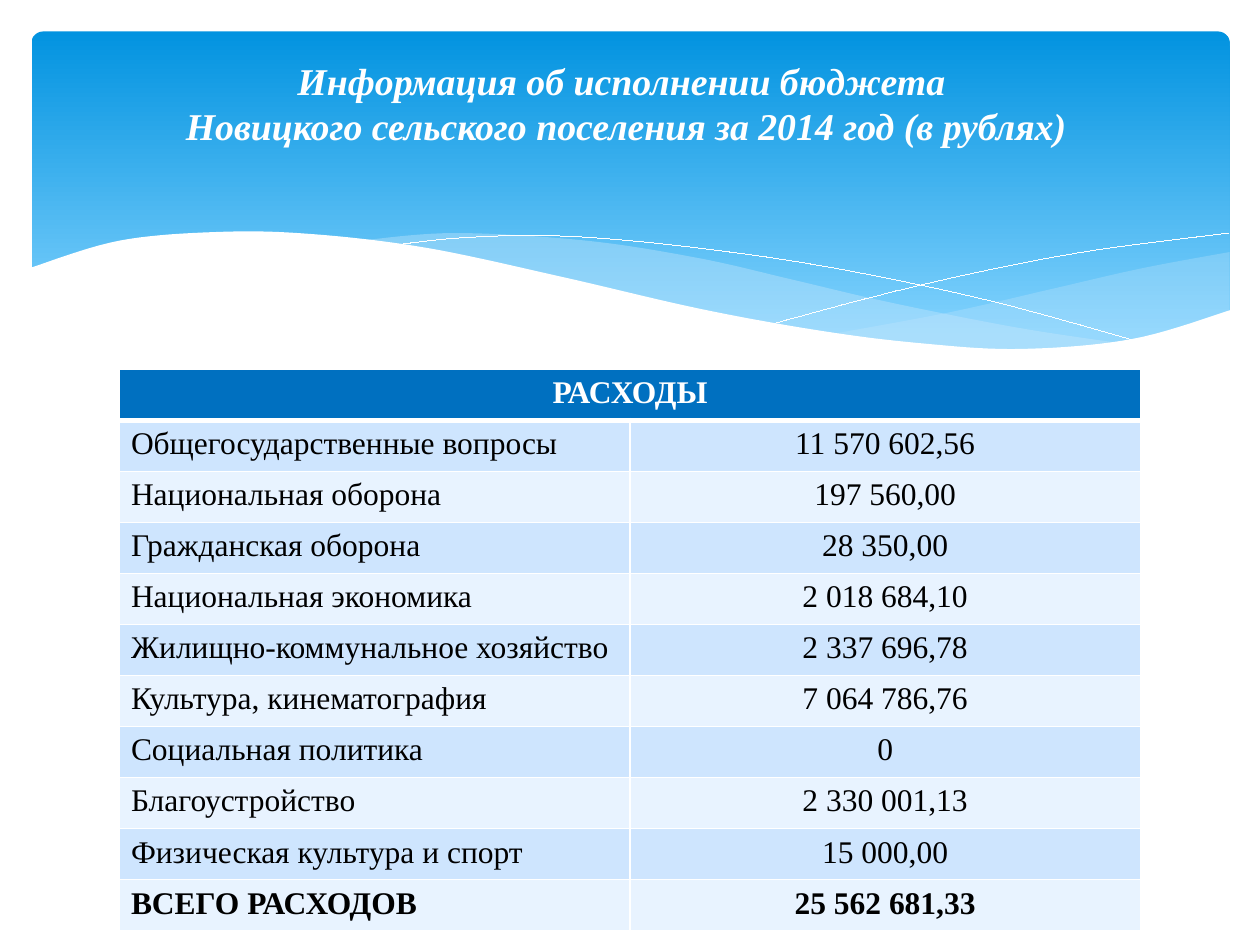
from lxml.etree import SubElement
from pptx import Presentation
from pptx.dml.color import RGBColor
from pptx.enum.shapes import MSO_SHAPE as Shape
from pptx.enum.text import MSO_ANCHOR as Anchor, PP_ALIGN as Align
from pptx.oxml.ns import qn
from pptx.util import Inches, Pt

WHITE = RGBColor(0xFF, 0xFF, 0xFF)
BLACK = RGBColor(0x00, 0x00, 0x00)
SKY_TOP = RGBColor(0x02, 0x93, 0xE0)
SKY_BOTTOM = RGBColor(0x83, 0xD3, 0xFE)
MIST = RGBColor(0xC6, 0xE7, 0xFC)
HEADER = RGBColor(0x00, 0x70, 0xC0)
BANDS = (RGBColor(0xCE, 0xE5, 0xFE), RGBColor(0xE8, 0xF3, 0xFF))

TITLE = ("Информация об исполнении бюджета ",
         "Новицкого сельского поселения за 2014 год (в рублях)")
EXPENSES = [
    ("Общегосударственные вопросы", "11 570 602,56"),
    ("Национальная оборона", "197 560,00"),
    ("Гражданская оборона", "28 350,00"),
    ("Национальная экономика", "2 018 684,10"),
    ("Жилищно-коммунальное хозяйство", "2 337 696,78"),
    ("Культура, кинематография", "7 064 786,76"),
    ("Социальная политика", "0"),
    ("Благоустройство", "2 330 001,13"),
    ("Физическая культура и спорт", "15 000,00"),
    ("ВСЕГО РАСХОДОВ", "25 562 681,33"),
]

# Knots that each curve passes through, left to right, in inches
RIGHT_CREST = [(6.61, 2.65), (7.53, 2.48), (8.32, 2.3), (9.06, 2.13), (9.76, 2)]
RIGHT_TROUGH = [(6.61, 2.65), (7.32, 2.74), (8.03, 2.78), (8.72, 2.74),
                (9.28, 2.63), (9.76, 2.47)]
MIDDLE_CREST = [(2.86, 1.91), (3.61, 1.85), (4.65, 1.91), (5.55, 2.05),
                (6.29, 2.22), (7.06, 2.4), (8.07, 2.6), (8.93, 2.73)]
MIDDLE_TROUGH = [(2.86, 1.91), (3.62, 2.03), (4.49, 2.22), (5.3, 2.4),
                 (6.18, 2.58), (7.09, 2.72), (7.96, 2.78), (8.93, 2.73)]
FRONT_CREST = [(0.23, 2.13), (0.95, 1.91), (1.77, 1.84), (2.5, 1.86), (3.4, 1.97),
               (4.47, 2.2), (5.55, 2.45), (6.48, 2.62), (7.26, 2.72),
               (8.09, 2.77), (8.99, 2.69), (9.77, 2.46)]
FRONT_BASE = [(0.23, 3.29), (9.77, 3.29)]
FALLING_LINE = [(3.09, 1.95), (3.63, 1.89), (4.33, 1.87), (5.1, 1.92),
                (6.08, 2.04), (6.95, 2.19), (7.95, 2.41), (9.07, 2.72)]
RISING_LINE = [(6.13, 2.57), (6.95, 2.35), (7.76, 2.16), (8.66, 1.99), (9.75, 1.85)]


def smooth(knots, steps=10):
    """Sample a Catmull-Rom spline, which passes through every knot."""
    padded = [knots[0], *knots, knots[-1]]
    points = [knots[0]]
    for before, start, end, after in zip(padded, padded[1:], padded[2:], padded[3:]):
        for step in range(1, steps + 1):
            t = step / steps
            points.append(tuple(
                b + t * ((c - a) + t * ((2 * a - 5 * b + 4 * c - d)
                                        + t * (3 * b - 3 * c + d - a))) / 2
                for a, b, c, d in zip(before, start, end, after)))
    return points


class BudgetSlide:
    FONT = "Times New Roman"
    TEXT_SIZE = Pt(18)
    TITLE_SIZE = Pt(21.6)
    HAIRLINE = Pt(0.01)

    def __init__(self, slide):
        self.slide = slide

    def style_text(self, paragraph, align, color, **font):
        paragraph.alignment = align
        paragraph.font.color.rgb = color
        for name, value in {"name": self.FONT, **font}.items():
            setattr(paragraph.font, name, value)

    def banner(self, left, top, width, height):
        sky = self.slide.shapes.add_shape(
            Shape.ROUNDED_RECTANGLE, *map(Inches, (left, top, width, height)))
        sky.adjustments[0] = 0.034
        sky.shadow.inherit = False
        sky.line.fill.background()
        sky.fill.gradient()
        sky.fill.gradient_angle = 270
        stops = zip(sky.fill.gradient_stops, (0, 0.9), (SKY_TOP, SKY_BOTTOM))
        for stop, position, color in stops:
            stop.position = position
            stop.color.rgb = color

    def outline(self, points, closed):
        start, *rest = [(Inches(x), Inches(y)) for x, y in points]
        builder = self.slide.shapes.build_freeform(*start)
        builder.add_line_segments(rest, close=closed)
        curve = builder.convert_to_shape()
        curve.shadow.inherit = False
        return curve

    def wave(self, upper, lower, color, opacity=100):
        # Along the upper edge, then back along the lower one
        wave = self.outline(smooth(upper) + smooth(lower)[::-1], True)
        wave.line.fill.background()
        wave.fill.solid()
        wave.fill.fore_color.rgb = color
        if opacity < 100:
            tint = wave.element.spPr.find(qn("a:solidFill"))[0]
            SubElement(tint, qn("a:alpha"), val=str(opacity * 1000))

    def thin_line(self, knots):
        curve = self.outline(smooth(knots), False)
        curve.fill.background()
        curve.line.color.rgb = WHITE
        curve.line.width = self.HAIRLINE

    def borders(self, cell, **widths):
        props = cell._tc.get_or_add_tcPr()
        for side in "LRTB":
            border = SubElement(props, qn(f"a:ln{side}"), w=str(Pt(widths.get(side, 1))))
            fill = SubElement(border, qn("a:solidFill"))
            SubElement(fill, qn("a:srgbClr"), val=str(WHITE))

    def cell(self, cell, text, fill, align, color, bold, **widths):
        self.borders(cell, **widths)
        cell.fill.solid()
        cell.fill.fore_color.rgb = fill
        cell.margin_left = cell.margin_right = Inches(0.09)
        cell.text = text
        self.style_text(cell.text_frame.paragraphs[0], align, color,
                        size=self.TEXT_SIZE, bold=bold)

    def table(self, heading, rows, left, top, width, height):
        table = self.slide.shapes.add_table(
            len(rows) + 1, 2, *map(Inches, (left, top, width, height))).table
        table.cell(0, 0).merge(table.cell(0, 1))
        for column, text in enumerate((heading, "")):
            self.cell(table.cell(0, column), text, HEADER, Align.CENTER, WHITE, True, B=3)
        for number, row in enumerate(rows, 1):
            band = BANDS[(number - 1) % 2]
            is_total = number == len(rows)
            top_border = 3 if number == 1 else 1
            for column, (text, align) in enumerate(zip(row, (Align.LEFT, Align.CENTER))):
                self.cell(table.cell(number, column), text, band, align, BLACK,
                          is_total, T=top_border)

    def title(self, lines, left, top, width, height):
        title = self.slide.shapes.title
        box = dict(left=left, top=top, width=width, height=height)
        for name, value in box.items():
            setattr(title, name, Inches(value))
        frame = title.text_frame
        frame.text = "\v".join(lines)
        frame.word_wrap = True
        frame.vertical_anchor = Anchor.MIDDLE
        self.style_text(frame.paragraphs[0], Align.CENTER, WHITE,
                        size=self.TITLE_SIZE, bold=True, italic=True)
        # Bring the title in front of the banner
        self.slide.shapes.element.append(title.element)


def main():
    deck = Presentation()
    deck.slide_width, deck.slide_height = Inches(10), Inches(7.5)
    budget = BudgetSlide(deck.slides.add_slide(deck.slide_layouts[5]))

    # Banner with waves, from back to front
    budget.banner(0.25, 0.25, 9.51, 2.7)
    budget.wave(RIGHT_CREST, RIGHT_TROUGH, MIST, 29)
    budget.wave(MIDDLE_CREST, MIDDLE_TROUGH, MIST, 40)
    for knots in (FALLING_LINE, RISING_LINE):
        budget.thin_line(knots)
    budget.wave(FRONT_CREST, FRONT_BASE, WHITE)

    # Expenses and title
    budget.table("РАСХОДЫ", EXPENSES, 0.95, 2.93, 8.1, 4.46)
    budget.title(TITLE, 0.47, 0.16, 9, 1.31)
    deck.save("out.pptx")


if __name__ == "__main__":
    main()
